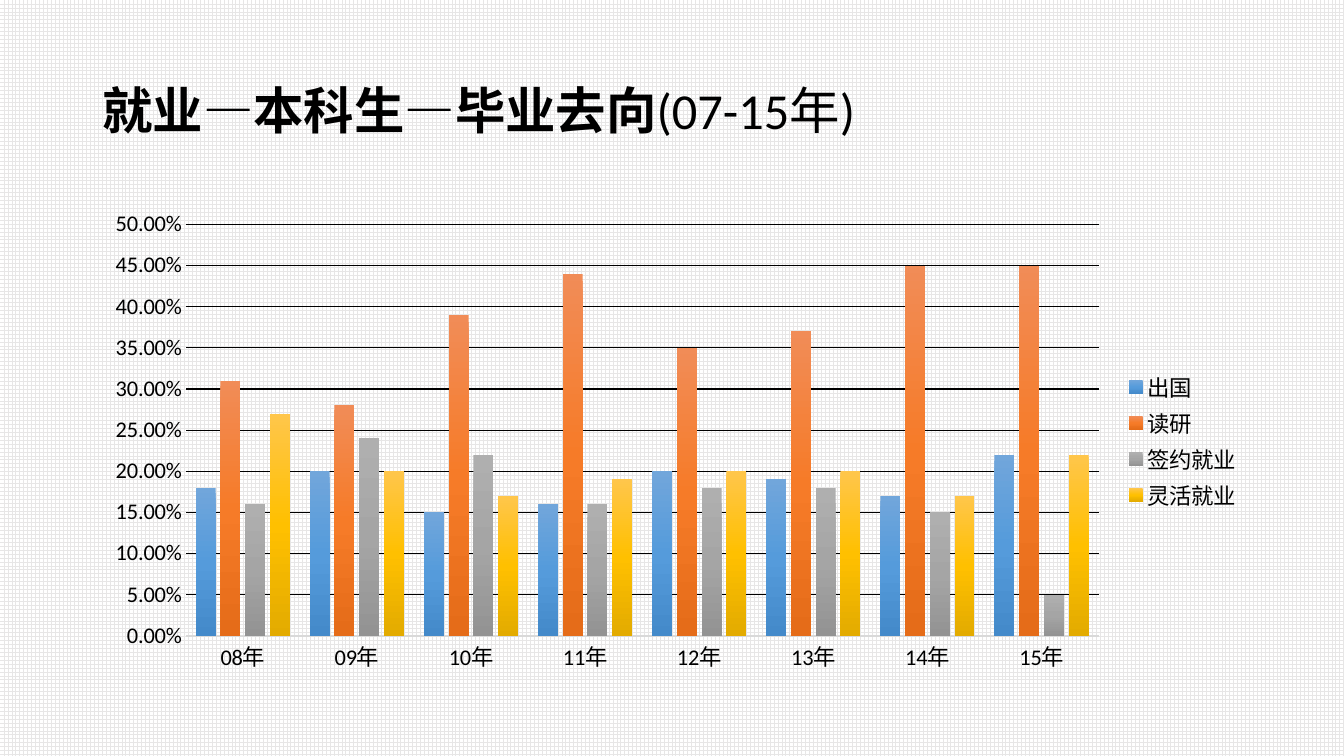
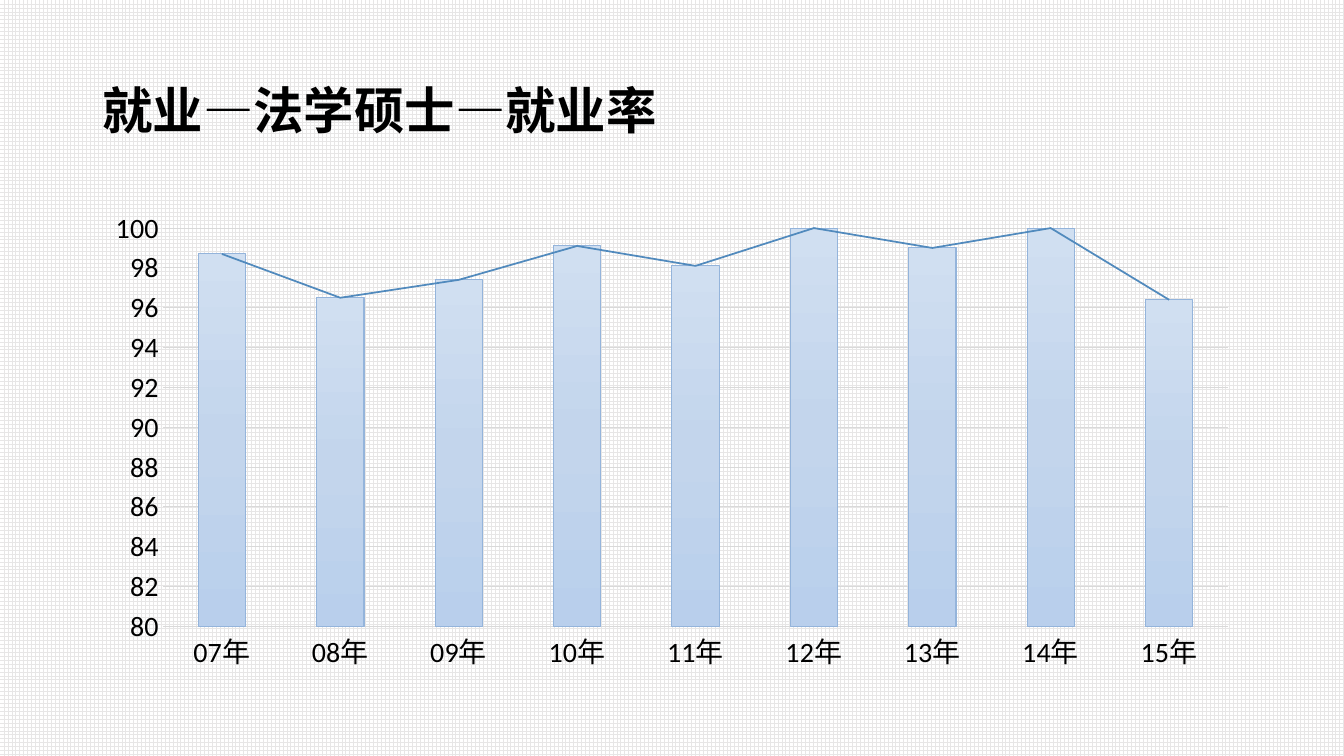
from lxml.etree import SubElement as Sub
from pptx import Presentation
from pptx.chart.data import CategoryChartData as Data
from pptx.dml.color import RGBColor as Rgb
from pptx.enum.chart import XL_CHART_TYPE as Kind, XL_LEGEND_POSITION as Side
from pptx.enum.chart import XL_MARKER_STYLE as Mark, XL_TICK_MARK as Tick
from pptx.enum.dml import MSO_PATTERN as Pat
from pptx.enum.text import MSO_ANCHOR as Anchor
from pptx.oxml.ns import qn
from pptx.util import Cm, Pt

HUES = {
    "ink": "000000", "paper": "FFFFFF", "mesh": "E7E6E6", "rule": "D9D9D9",
    "edge": "94B4DB", "trend": "518ABD",
}
FADES = {
    "blue": ("71A6DB", "559BDB", "448ACA"),
    "orange": ("F18C57", "F67B28", "E56C19"),
    "grey": ("AFAFAF", "A5A5A5", "939393"),
    "gold": ("FFC64B", "FFC000", "E3AB00"),
    "pale": ("D0DFF1", "C3D5EC", "B9CFEC"),
}
LATIN, HAN = "Calibri", "Noto Sans CJK SC"
HEAD = (2.33, 1.01, 29.21, 3.68)
BODY = (2.33, 5.07, 29.21, 12.09)

PATHS = {
    "出国": ("blue", (0.18, 0.2, 0.15, 0.16, 0.2, 0.19, 0.17, 0.22)),
    "读研": ("orange", (0.31, 0.28, 0.39, 0.44, 0.35, 0.37, 0.45, 0.45)),
    "签约就业": ("grey", (0.16, 0.24, 0.22, 0.16, 0.18, 0.18, 0.15, 0.05)),
    "灵活就业": ("gold", (0.27, 0.2, 0.17, 0.19, 0.2, 0.2, 0.17, 0.22)),
}
RATES = (98.7, 96.5, 97.4, 99.1, 98.1, 100, 99, 100, 96.4)


def hue(name):
    return Rgb.from_string(HUES[name])


def put(item, form):
    for key, val in form.items():
        setattr(item, key, val)


def ink(font, size, face=LATIN, bold=False):
    put(font, {"size": Pt(size), "name": face, "bold": bold})
    font.color.rgb = hue("ink")


def stroke(line, name, width):
    line.color.rgb = hue(name)
    line.width = Pt(width)


def fade(bars, name):
    grad = Sub(bars._element.get_or_add_spPr(), qn("a:gradFill"))
    stops = Sub(grad, qn("a:gsLst"))
    for spot, tint in enumerate(FADES[name]):
        stop = Sub(stops, qn("a:gs"), pos=str(spot * 50000))
        Sub(stop, qn("a:srgbClr"), val=tint)
    Sub(grad, qn("a:lin"), ang="5400000", scaled="0")


def years(first):
    return [f"{year:02}年" for year in range(first, 16)]


def title(slide, box, *parts):
    frame = slide.shapes.add_textbox(*map(Cm, box)).text_frame
    put(frame, {"word_wrap": True, "vertical_anchor": Anchor.MIDDLE})
    para = frame.paragraphs[0]
    para.line_spacing = 0.9
    for text, face, bold in parts:
        run = para.add_run()
        run.text = text
        ink(run.font, 36, face, bold)
        Sub(run.font._element, qn("a:ea"), typeface=HAN)


def columns(slide, box, cats, rows, size, scale, grid, base, style):
    data = Data(number_format=style)
    data.categories = cats
    for name, vals in rows:
        data.add_series(name, vals)
    chart = slide.shapes.add_chart(Kind.COLUMN_CLUSTERED, *map(Cm, box), data).chart
    put(chart, {"has_title": False, "has_legend": False})
    ink(chart.font, size)
    for axis in (chart.category_axis, chart.value_axis):
        put(axis, {"major_tick_mark": Tick.NONE, "minor_tick_mark": Tick.NONE})
        ink(axis.tick_labels.font, size)
    stroke(chart.category_axis.format.line, "rule", base)
    axis = chart.value_axis
    put(axis, dict(zip(("minimum_scale", "maximum_scale", "major_unit"), scale)))
    put(axis.tick_labels, {"number_format": style, "number_format_is_linked": False})
    axis.format.line.fill.background()
    stroke(axis.major_gridlines.format.line, grid, 0.75)
    chart.plots[0].vary_by_categories = False
    return chart


def overlay(chart):
    bars = chart.plots[0]._element
    row = chart.plots[0].series[1]._element
    trend = bars.makeelement(qn("c:lineChart"))
    bars.addnext(trend)
    Sub(trend, qn("c:grouping"), val="standard")
    Sub(trend, qn("c:varyColors"), val="0")
    for flag in row.findall(qn("c:invertIfNegative")):
        row.remove(flag)
    trend.append(row)
    Sub(trend, qn("c:marker"), val="1")
    for link in bars.findall(qn("c:axId")):
        Sub(trend, qn("c:axId"), val=link.get("val"))
    line = chart.plots[1].series[0]
    line.smooth = False
    line.marker.style = Mark.NONE
    stroke(line.format.line, "trend", 1.25)


def paths(slide):
    title(slide, HEAD, ("就业—本科生—毕业去向", HAN, True), ("(07-15年)", LATIN, False))
    rows = [(name, vals) for name, (_, vals) in PATHS.items()]
    chart = columns(slide, BODY, years(8), rows, 16, (0, 0.5, 0.05), "ink", 1, "0.00%")
    plot = chart.plots[0]
    put(plot, {"gap_width": 100, "overlap": -24})
    for bars in plot.series:
        fade(bars, PATHS[bars.name][0])
    chart.has_legend = True
    put(chart.legend, {"position": Side.RIGHT, "include_in_layout": False})
    ink(chart.legend.font, 16)


def rates(slide):
    title(slide, HEAD, ("就业—法学硕士—就业率", HAN, True))
    rows = [(f"Series {spot}", RATES) for spot in (1, 2)]
    chart = columns(slide, BODY, years(7), rows, 20, (80, 100, 2), "rule", 0.75, "General")
    overlay(chart)
    plot = chart.plots[0]
    plot.gap_width = 150
    bars = plot.series[0]
    fade(bars, "pale")
    stroke(bars.format.line, "edge", 0.75)


def main():
    deck = Presentation()
    put(deck, {"slide_width": Cm(33.87), "slide_height": Cm(19.05)})
    fill = deck.slide_master.background.fill
    fill.patterned()
    fill.pattern = Pat.LARGE_GRID
    fill.fore_color.rgb = hue("mesh")
    fill.back_color.rgb = hue("paper")
    for build in (paths, rates):
        build(deck.slides.add_slide(deck.slide_layouts[6]))
    deck.save("out.pptx")


if __name__ == "__main__":
    main()
